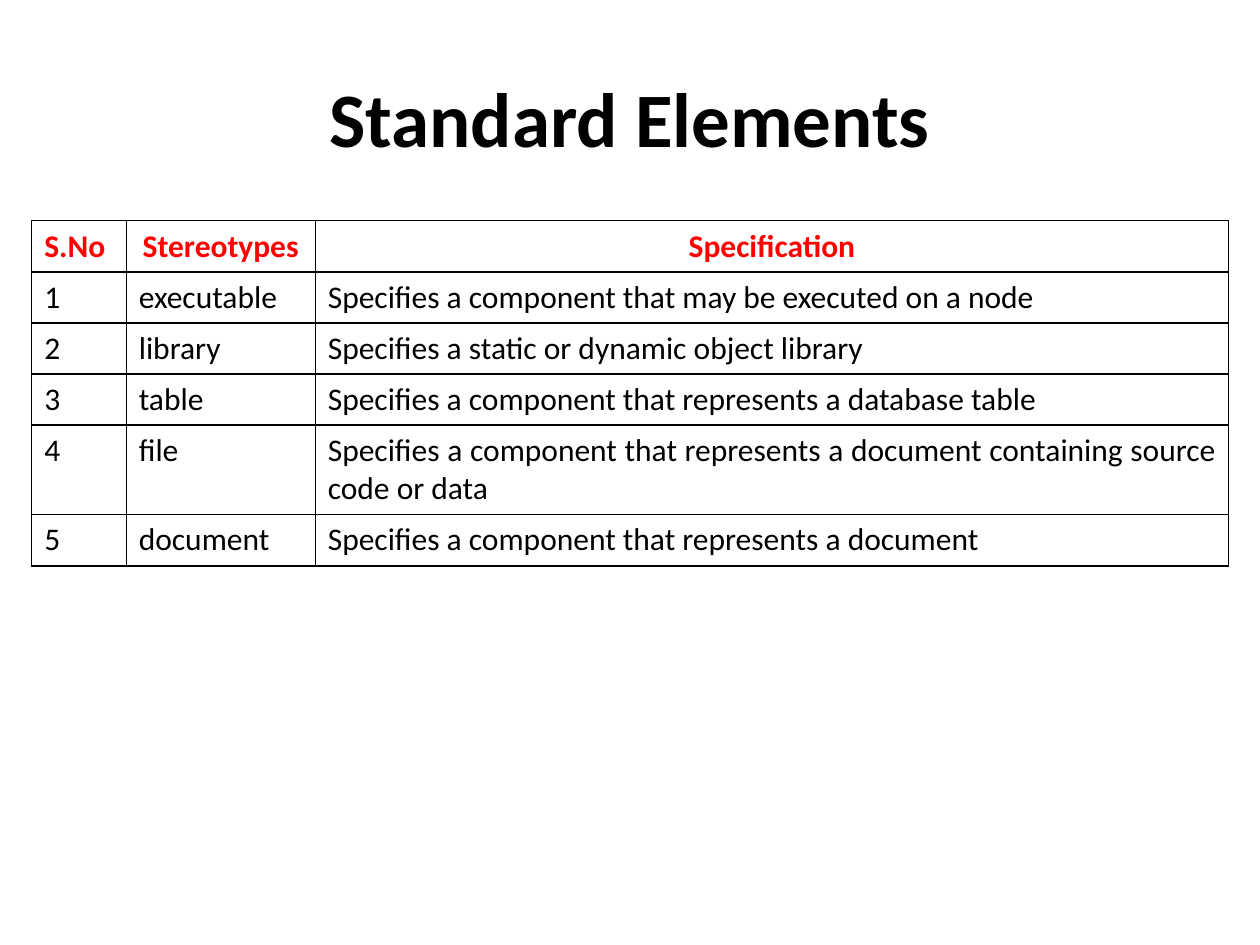
from dataclasses import dataclass

from lxml.etree import SubElement
from pptx import Presentation
from pptx.dml.color import RGBColor
from pptx.enum.text import MSO_ANCHOR, PP_ALIGN
from pptx.oxml.ns import qn
from pptx.util import Cm, Pt


@dataclass(frozen=True)
class Theme:
    """Fonts, type sizes and colours of the slide."""
    font: str = "Calibri"
    title_size: int = 44
    table_size: int = 18
    text: str = "000000"
    header: str = "FF0000"
    border: str = "000000"
    border_width: int = 1


THEME = Theme()
HEADERS = ("S.No", "Stereotypes", "Specification")
ELEMENTS = (
    ("executable", "Specifies a component that may be executed on a node"),
    ("library", "Specifies a static or dynamic object library"),
    ("table", "Specifies a component that represents a database table"),
    ("file", "Specifies a component that represents a document containing source code or data"),
    ("document", "Specifies a component that represents a document"),
)
COLUMN_SHARES = (0.75, 1.5, 7.25)
HEADER_ALIGNS = (PP_ALIGN.LEFT, PP_ALIGN.CENTER, PP_ALIGN.CENTER)
BODY_ALIGNS = (PP_ALIGN.LEFT, PP_ALIGN.LEFT, PP_ALIGN.JUSTIFY)


def format_paragraph(p, size, color, bold, align):
    """Set the font and alignment of a paragraph."""
    p.alignment = align
    p.font.name = THEME.font
    p.font.size = Pt(size)
    p.font.bold = bold
    p.font.color.rgb = RGBColor.from_string(color)


def add_borders(cell):
    """Draw a solid line on all four sides of a cell."""
    tc_pr = cell._tc.get_or_add_tcPr()
    for i, side in enumerate(("lnL", "lnR", "lnT", "lnB")):
        ln = tc_pr.makeelement(qn(f"a:{side}"), {"w": str(Pt(THEME.border_width))})
        fill = SubElement(ln, qn("a:solidFill"))
        SubElement(fill, qn("a:srgbClr"), val=THEME.border)
        tc_pr.insert(i, ln)


def place_title(s, text, left, top, width, height):
    """Place the title placeholder in the given box."""
    sp = s.shapes.title
    sp.left, sp.top, sp.width, sp.height = left, top, width, height
    tf = sp.text_frame
    tf.text = text
    tf.vertical_anchor = MSO_ANCHOR.MIDDLE
    format_paragraph(tf.paragraphs[0], THEME.title_size, THEME.text, True, PP_ALIGN.CENTER)


def place_table(s, left, top, width, row_height):
    """Place the numbered table of standard elements."""
    rows = [HEADERS] + [(str(n), *element) for n, element in enumerate(ELEMENTS, 1)]
    table = s.shapes.add_table(
        len(rows), len(HEADERS), left, top, width, row_height * len(rows)
    ).table
    table.first_row = table.horz_banding = False
    for column, share in zip(table.columns, COLUMN_SHARES):
        column.width = int(width * share / sum(COLUMN_SHARES))
    for r, values in enumerate(rows):
        is_header = r == 0
        color = THEME.header if is_header else THEME.text
        aligns = HEADER_ALIGNS if is_header else BODY_ALIGNS
        for c, (value, align) in enumerate(zip(values, aligns)):
            cell = table.cell(r, c)
            cell.text = value
            cell.fill.background()
            add_borders(cell)
            format_paragraph(
                cell.text_frame.paragraphs[0], THEME.table_size, color, is_header, align
            )


def main():
    """Build the slide and save it."""
    prs = Presentation()
    prs.slide_width, prs.slide_height = Cm(25.4), Cm(19.05)
    s = prs.slides.add_slide(prs.slide_layouts[5])
    place_title(s, "Standard Elements", Cm(1.27), Cm(0.76), Cm(22.86), Cm(3.18))
    place_table(s, Cm(0.64), Cm(4.45), Cm(24.13), Cm(1.03))
    prs.save("out.pptx")


if __name__ == "__main__":
    main()
